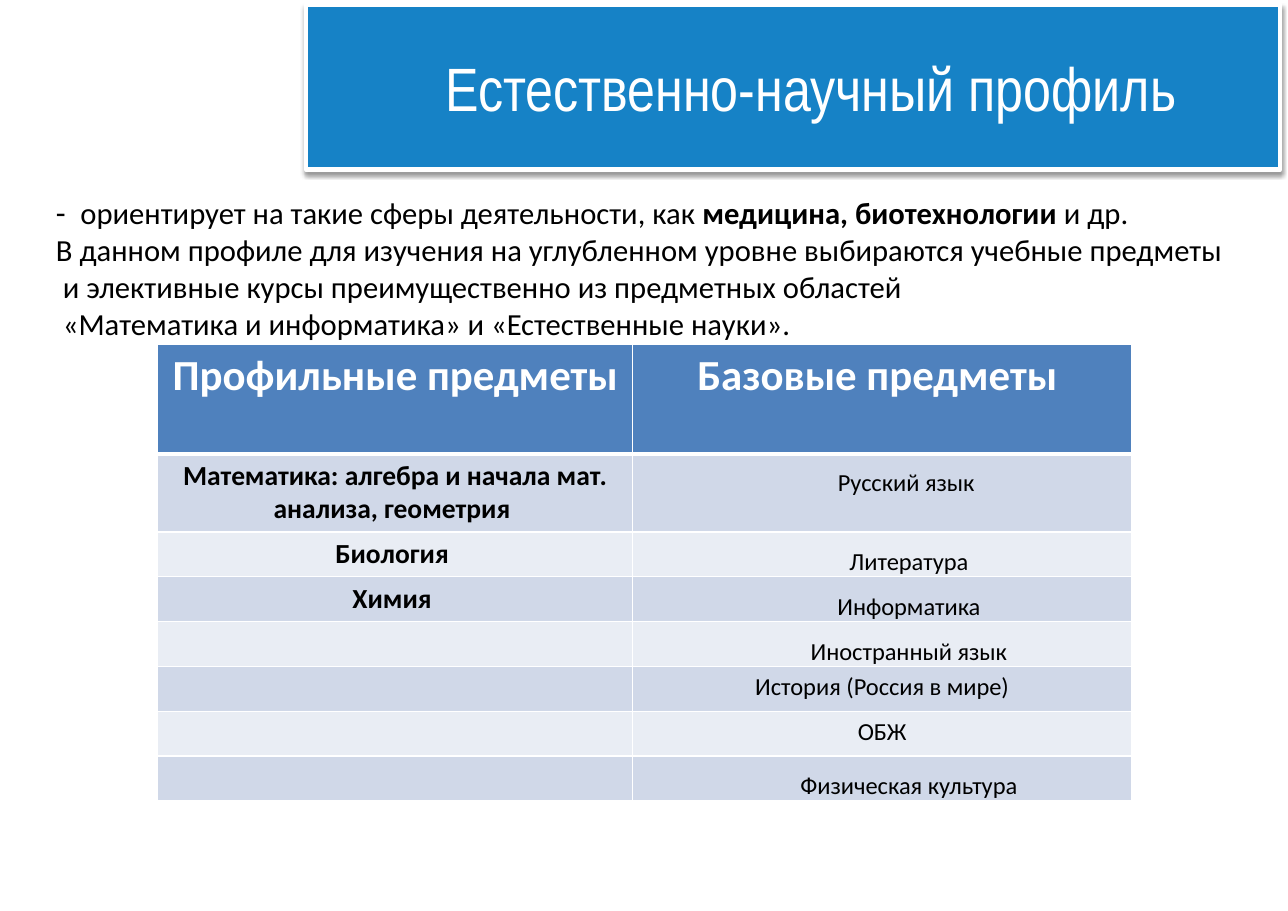
from lxml.etree import SubElement as Sub
from pptx import Presentation
from pptx.dml.color import RGBColor
from pptx.enum.shapes import MSO_SHAPE as Shape
from pptx.enum.text import MSO_ANCHOR as Anchor, MSO_AUTO_SIZE as Auto, PP_ALIGN as Align
from pptx.oxml.ns import qn
from pptx.util import Pt

# Content
TITLE = "Естественно-научный профиль "
INTRO = [
    [("-\t", 21, False),
     ("ориентирует на такие сферы деятельности, как ", 20, False),
     ("медицина, биотехнологии ", 20, True),
     ("и др.", 20, False)],
    [("В данном профиле для изучения на углубленном уровне выбираются учебные предметы", 20, False)],
    [(" и элективные курсы преимущественно из предметных областей", 20, False)],
    [(" «Математика и информатика» и «Естественные науки».", 20, False)],
]
HEADS = ("Профильные предметы ", "Базовые предметы ")
MAIN = ["Математика: алгебра и начала мат. анализа, геометрия ", "Биология ", "Химия "]
BASE = ["Русский язык ", "Литература", "Информатика", "Иностранный язык",
        "История (Россия в мире)", "ОБЖ", "Физическая культура"]
PLAIN = BASE[4:6]  # base subjects set without the first-line indent

# Format
BLUE, HEAD, WHITE, BLACK = "1682C6", "4F81BD", "FFFFFF", "000000"
BANDS = ("D0D8E8", "E9EDF4")
COLS = (310.5, 326)
ROWS = [71.5, 49.5] + [28] * 6
INDENT = 35


def rgb(code):
    return RGBColor.from_string(code)


def put(para, text, size, color, bold=False, face="Calibri"):
    run = para.add_run()
    run.text = text
    look = {"size": Pt(size), "bold": bold, "name": face}
    for key, val in look.items():
        setattr(run.font, key, val)
    run.font.color.rgb = rgb(color)


def edge(cell, side, width):
    line = Sub(cell._tc.get_or_add_tcPr(), qn("a:ln" + side), w=str(Pt(width)))
    Sub(Sub(line, qn("a:solidFill")), qn("a:srgbClr"), val=WHITE)


def fill(cell, text, size, color, bold, back, base=1):
    for side in "LRTB":
        edge(cell, side, base if side == "B" else 1)
    cell.fill.solid()
    cell.fill.fore_color.rgb = rgb(back)
    para = cell.text_frame.paragraphs[0]
    para.alignment = Align.CENTER
    if text:
        put(para, text, size, color, bold)
    return para


deck = Presentation()
deck.slide_width, deck.slide_height = Pt(841.68), Pt(595.44)
slide = deck.slides.add_slide(deck.slide_layouts[5])
parts = slide.shapes

# Title band with its shadow, placed behind the title
band = parts.add_shape(Shape.RECTANGLE, Pt(200), Pt(3), Pt(636.5), Pt(108))
band.fill.solid()
band.fill.fore_color.rgb = rgb(BLUE)
band.line.color.rgb = rgb(WHITE)
band.line.width = Pt(3)
band.shadow.inherit = False
glow = Sub(band._element.spPr.find(qn("a:effectLst")), qn("a:outerShdw"),
           blurRad=str(Pt(3)), dist=str(Pt(1.6)), dir="5400000", rotWithShape="0")
Sub(Sub(glow, qn("a:srgbClr"), val=BLACK), qn("a:alpha"), val="38000")
parts._spTree.insert(2, band._element)

# Title
title = parts.title
place = {"left": 231, "top": 29, "width": 607, "height": 55.5}
for key, val in place.items():
    setattr(title, key, Pt(val))
frame = title.text_frame
frame.auto_size, frame.vertical_anchor = Auto.NONE, Anchor.TOP
frame.paragraphs[0].alignment = Align.CENTER
put(frame.paragraphs[0], TITLE, 40, WHITE, face="Arial Narrow")

# Table of subjects
table = parts.add_table(len(ROWS), len(COLS), Pt(103), Pt(225),
                        Pt(sum(COLS)), Pt(sum(ROWS))).table
for col, wide in zip(table.columns, COLS):
    col.width = Pt(wide)
for row, high in zip(table.rows, ROWS):
    row.height = Pt(high)
for c, text in enumerate(HEADS):
    fill(table.cell(0, c), text, 28, WHITE, True, HEAD, 3)
for r, name in enumerate(BASE):
    back = BANDS[r % 2]
    main = MAIN[r] if r < len(MAIN) else ""
    fill(table.cell(r + 1, 0), main, 18, BLACK, True, back)
    cell = table.cell(r + 1, 1)
    para = fill(cell, name, 16, BLACK, False, back)
    if name not in PLAIN:
        para.line_spacing = 1.5
        para._p.get_or_add_pPr().set("indent", str(Pt(INDENT)))
        pads = {"left": 5, "right": 5, "top": 0, "bottom": 0}
        for side, pad in pads.items():
            setattr(cell, "margin_" + side, Pt(pad))

# Introduction, with a tab stop after the dash
frame = parts.add_textbox(Pt(29.5), Pt(122.5), Pt(783.5), Pt(133)).text_frame
frame.word_wrap = True
for n, line in enumerate(INTRO):
    para = frame.add_paragraph() if n else frame.paragraphs[0]
    if n == 0:
        tabs = Sub(para._p.get_or_add_pPr(), qn("a:tabLst"))
        Sub(tabs, qn("a:tab"), pos=str(Pt(16)), algn="l")
    for text, size, bold in line:
        put(para, text, size, BLACK, bold)

deck.save("out.pptx")
